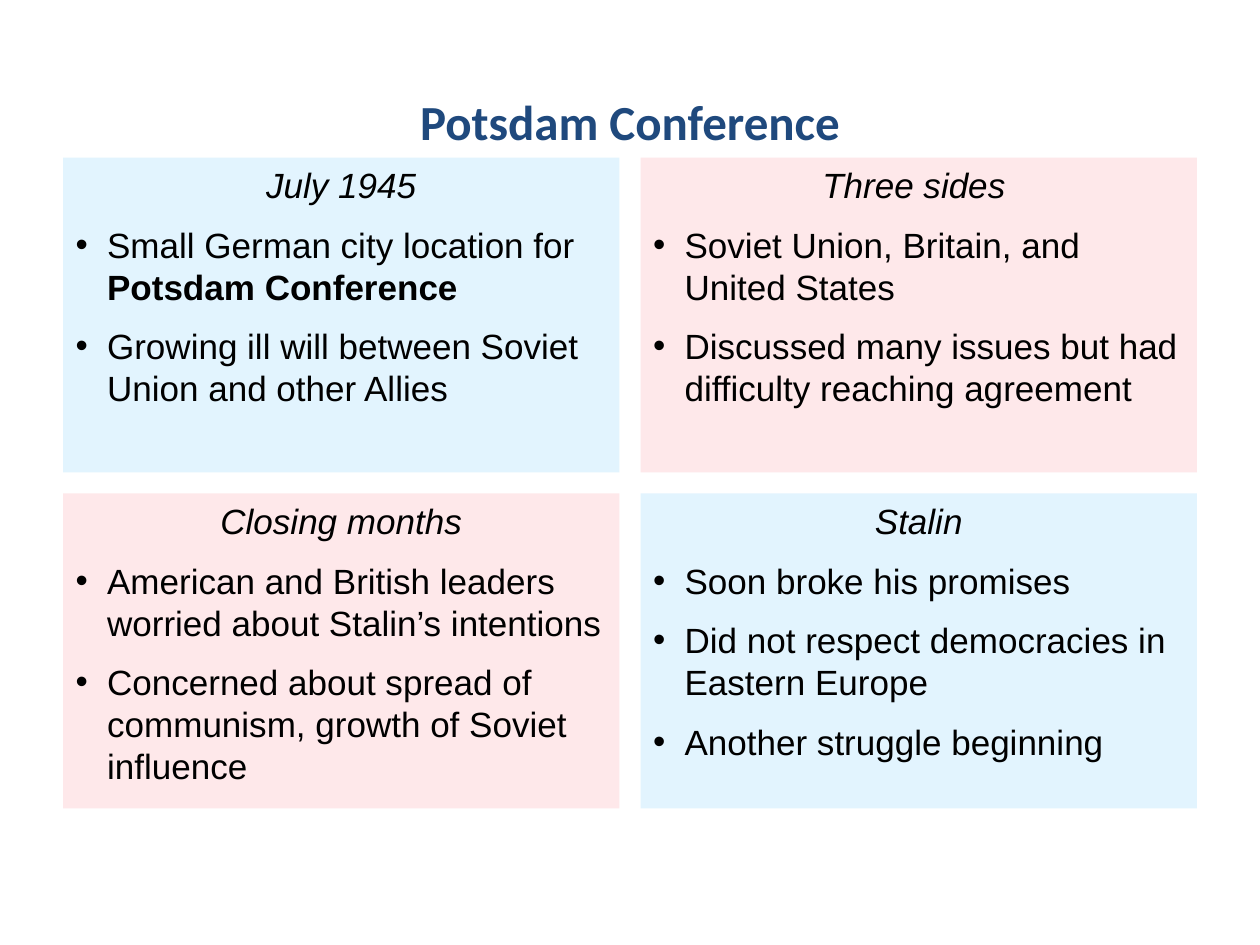
from dataclasses import dataclass

import lxml.etree
import pptx
import pptx.dml.color
import pptx.enum.text
import pptx.oxml.ns
import pptx.util

Pt = pptx.util.Pt
ALIGN = pptx.enum.text.PP_ALIGN
ANCHOR = pptx.enum.text.MSO_ANCHOR

BLUE = "E2F4FE"
PINK = "FEE8EA"
NAVY = "1F497D"
BLACK = "000000"

MARGIN = 36
PANEL_TOP = 90
PANEL_WIDTH = 318
PANEL_HEIGHT = 180
GAP = 12
INDENT = 18


@dataclass(frozen=True)
class Panel:
    column: int
    row: int
    fill: str
    heading: str
    bullets: tuple[tuple[str, ...], ...]


PANELS = (
    Panel(0, 0, BLUE, "July 1945", (
        ("Small German city location for ", "Potsdam Conference"),
        ("Growing ill will between Soviet Union and other Allies",),
    )),
    Panel(0, 1, PINK, "Closing months", (
        ("American and British leaders worried about Stalin’s intentions",),
        ("Concerned about spread of communism, growth of Soviet influence",),
    )),
    Panel(1, 0, PINK, "Three sides ", (
        ("Soviet Union, Britain, and United States",),
        ("Discussed many issues but had difficulty reaching agreement",),
    )),
    Panel(1, 1, BLUE, "Stalin", (
        ("Soon broke his promises",),
        ("Did not respect democracies in Eastern Europe",),
        ("Another struggle beginning",),
    )),
)


def color(value: str) -> pptx.dml.color.RGBColor:
    return pptx.dml.color.RGBColor.from_string(value)


def add_text(paragraph, text: str, *, size: float = 20, font: str = "Arial",
             fill: str = BLACK, bold: bool = False, italic: bool = False) -> None:
    run = paragraph.add_run()
    run.text = text
    run.font.size = Pt(size)
    run.font.name = font
    run.font.bold = bold
    run.font.italic = italic
    run.font.color.rgb = color(fill)


def place(shape, left: float, top: float, width: float, height: float, anchor):
    shape.left, shape.top = Pt(left), Pt(top)
    shape.width, shape.height = Pt(width), Pt(height)
    frame = shape.text_frame
    frame.word_wrap = True
    frame.auto_size = pptx.enum.text.MSO_AUTO_SIZE.NONE
    frame.vertical_anchor = anchor
    return frame


def format_paragraph(paragraph, alignment, bullet: str = "") -> None:
    paragraph.alignment = alignment
    paragraph.line_spacing = Pt(24)
    paragraph.space_before = Pt(0)
    paragraph.space_after = Pt(10)
    properties = paragraph._p.get_or_add_pPr()
    properties.set("marL", str(Pt(INDENT)))
    properties.set("indent", str(-Pt(INDENT)))
    qualified = pptx.oxml.ns.qn
    if bullet:
        lxml.etree.SubElement(properties, qualified("a:buFont"), typeface="Arial")
        lxml.etree.SubElement(properties, qualified("a:buChar"), char=bullet)
    else:
        lxml.etree.SubElement(properties, qualified("a:buNone"))


def draw_panel(shape, panel: Panel) -> None:
    left = MARGIN + panel.column * (PANEL_WIDTH + GAP)
    top = PANEL_TOP + panel.row * (PANEL_HEIGHT + GAP)
    frame = place(shape, left, top, PANEL_WIDTH, PANEL_HEIGHT, ANCHOR.TOP)
    shape.fill.solid()
    shape.fill.fore_color.rgb = color(panel.fill)
    heading = frame.paragraphs[0]
    format_paragraph(heading, ALIGN.CENTER)
    add_text(heading, panel.heading, italic=True)
    for parts in panel.bullets:
        paragraph = frame.add_paragraph()
        format_paragraph(paragraph, ALIGN.LEFT, "•")
        for index, part in enumerate(parts):
            add_text(paragraph, part, bold=index == 1)


def main() -> None:
    presentation = pptx.Presentation()
    presentation.slide_width, presentation.slide_height = Pt(720), Pt(540)
    comparison = presentation.slide_layouts.get_by_name("Comparison")
    slide = presentation.slides.add_slide(comparison)

    title = place(slide.shapes.title, 48, 48, 624, 42, ANCHOR.MIDDLE).paragraphs[0]
    title.alignment = ALIGN.CENTER
    add_text(title, "Potsdam Conference", size=28, font="Calibri", fill=NAVY, bold=True)

    bodies = [shape for shape in slide.placeholders
              if shape.placeholder_format.idx in (1, 2, 3, 4)]
    for shape, panel in zip(bodies, PANELS):
        draw_panel(shape, panel)

    presentation.save("out.pptx")


if __name__ == "__main__":
    main()
